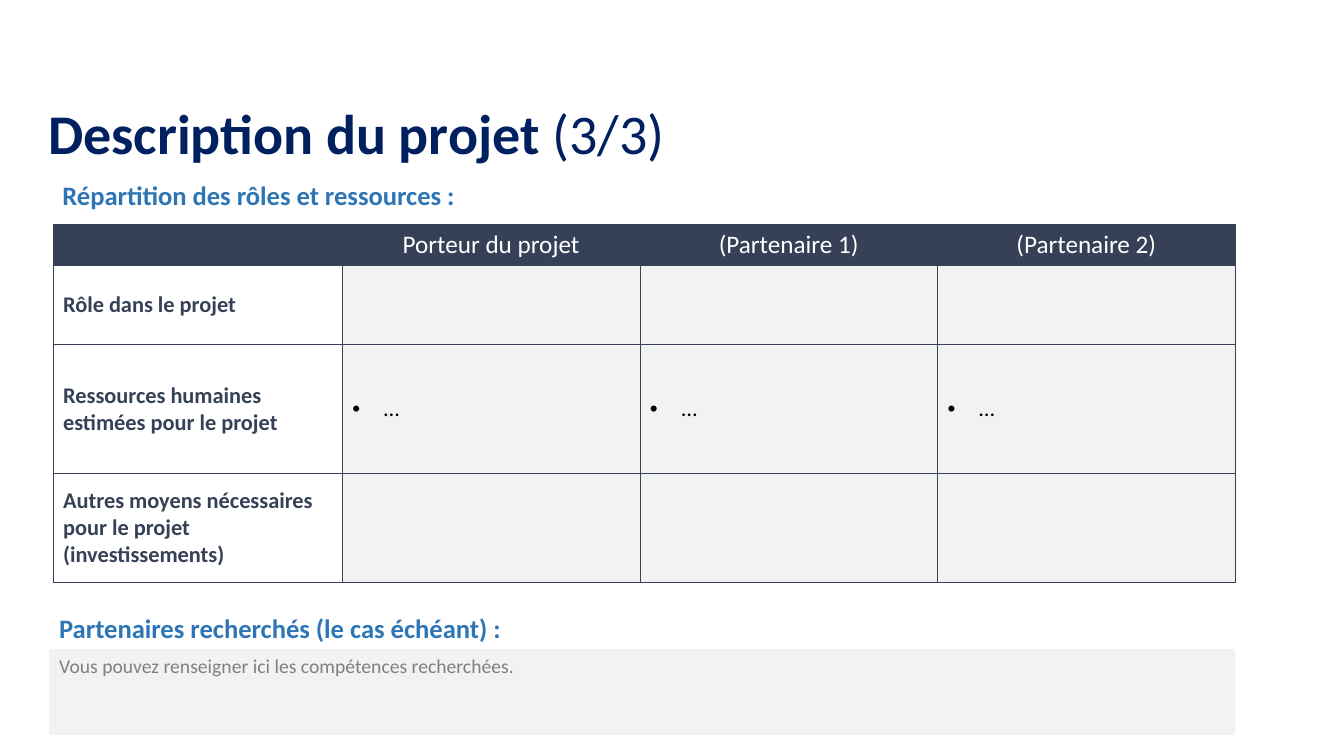
"""Builds the project description slide: roles table and wanted partners."""
from lxml import etree
from pptx import Presentation
from pptx.dml.color import RGBColor
from pptx.enum import shapes, text
from pptx.oxml import ns
from pptx.util import Pt

COLORS = {"title": "002060", "heading": "2E75B6", "navy": "364157", "white": "FFFFFF",
          "black": "000000", "panel": "F2F2F2", "hint": "808080"}
FONT = "Calibri"
TITLE = [("Description du projet ", True), ("(3/3)", False)]
HEADINGS = [("Répartition des rôles et ressources :", 37.5, 124.5),
            ("Partenaires recherchés (le cas échéant) :", 35.2, 433.5)]
HINT = "Vous pouvez renseigner ici les compétences recherchées."
ROLES = [("", "Porteur du projet", "(Partenaire 1)", "(Partenaire 2)"),
         ("Rôle dans le projet", "", "", ""),
         ("Ressources humaines estimées pour le projet", "…", "…", "…"),
         ("Autres moyens nécessaires pour le projet (investissements)", "", "", "")]
TABLE_LEFT, TABLE_TOP = 37.9, 160
COLUMN_WIDTHS = [206.6, 212.6, 212.6, 212.6]
ROW_HEIGHTS = [29.2, 57.1, 91.9, 77.8]
BULLET_INDENT = 22.5


def add_span(para, words, size, color, bold=False):
    span = para.add_run()
    span.text = words
    span.font.name = FONT
    span.font.size = Pt(size)
    span.font.bold = bold
    span.font.color.rgb = RGBColor.from_string(COLORS[color])


def add_box(page, left, top, width, height):
    box = page.shapes.add_textbox(Pt(left), Pt(top), Pt(width), Pt(height))
    box.text_frame.word_wrap = True
    return box.text_frame


def add_borders(cell):
    properties = cell._tc.get_or_add_tcPr()
    for side in ("lnL", "lnR", "lnT", "lnB"):
        line = etree.SubElement(properties, ns.qn("a:" + side), w=str(Pt(0.5)))
        fill = etree.SubElement(line, ns.qn("a:solidFill"))
        etree.SubElement(fill, ns.qn("a:srgbClr"), val=COLORS["navy"])


def add_bullet(para):
    properties = para._p.get_or_add_pPr()
    properties.set("marL", str(Pt(BULLET_INDENT)))
    properties.set("indent", str(-Pt(BULLET_INDENT)))
    etree.SubElement(properties, ns.qn("a:buFont"), typeface="Arial")
    etree.SubElement(properties, ns.qn("a:buChar"), char="•")


def fill_cell(cell, words, row, column):
    add_borders(cell)
    para = cell.text_frame.paragraphs[0]
    if row and not column:
        cell.fill.background()
    else:
        cell.fill.solid()
        cell.fill.fore_color.rgb = RGBColor.from_string(COLORS["panel" if row else "navy"])
    if row:
        cell.vertical_anchor = text.MSO_ANCHOR.MIDDLE
    if not words:
        return
    if not row:
        para.alignment = text.PP_ALIGN.CENTER
        add_span(para, words, 18, "white")
    elif not column:
        add_span(para, words, 16, "navy", True)
    else:
        add_bullet(para)
        add_span(para, words, 16, "black")


def add_roles_table(page):
    table = page.shapes.add_table(
        len(ROLES), len(COLUMN_WIDTHS), Pt(TABLE_LEFT), Pt(TABLE_TOP),
        Pt(sum(COLUMN_WIDTHS)), Pt(sum(ROW_HEIGHTS))).table
    table.first_row = table.horz_banding = False
    for column, width in zip(table.columns, COLUMN_WIDTHS):
        column.width = Pt(width)
    for row, height in zip(table.rows, ROW_HEIGHTS):
        row.height = Pt(height)
    for row, entries in enumerate(ROLES):
        for column, words in enumerate(entries):
            fill_cell(table.cell(row, column), words, row, column)


def add_hint_panel(page):
    panel = page.shapes.add_shape(shapes.MSO_SHAPE.RECTANGLE,
                                  Pt(35.2), Pt(463.7), Pt(847.2), Pt(61.2))
    panel.shadow.inherit = False
    panel.fill.solid()
    panel.fill.fore_color.rgb = RGBColor.from_string(COLORS["panel"])
    panel.line.fill.background()
    panel.text_frame.vertical_anchor = text.MSO_ANCHOR.TOP
    para = panel.text_frame.paragraphs[0]
    para.alignment = text.PP_ALIGN.LEFT
    add_span(para, HINT, 14, "hint")


def main():
    deck = Presentation()
    deck.slide_width, deck.slide_height = Pt(960), Pt(540)
    page = deck.slides.add_slide(deck.slide_layouts[6])
    title = add_box(page, 27.4, 64.8, 686, 65.5)
    title.vertical_anchor = text.MSO_ANCHOR.MIDDLE
    title.paragraphs[0].line_spacing = 0.9
    for words, bold in TITLE:
        add_span(title.paragraphs[0], words, 40, "title", bold)
    add_roles_table(page)
    add_hint_panel(page)
    for words, left, top in HEADINGS:
        heading = add_box(page, left, top, 558.7, 30.2)
        add_span(heading.paragraphs[0], words, 19, "heading", True)
    deck.save("out.pptx")


if __name__ == "__main__":
    main()
